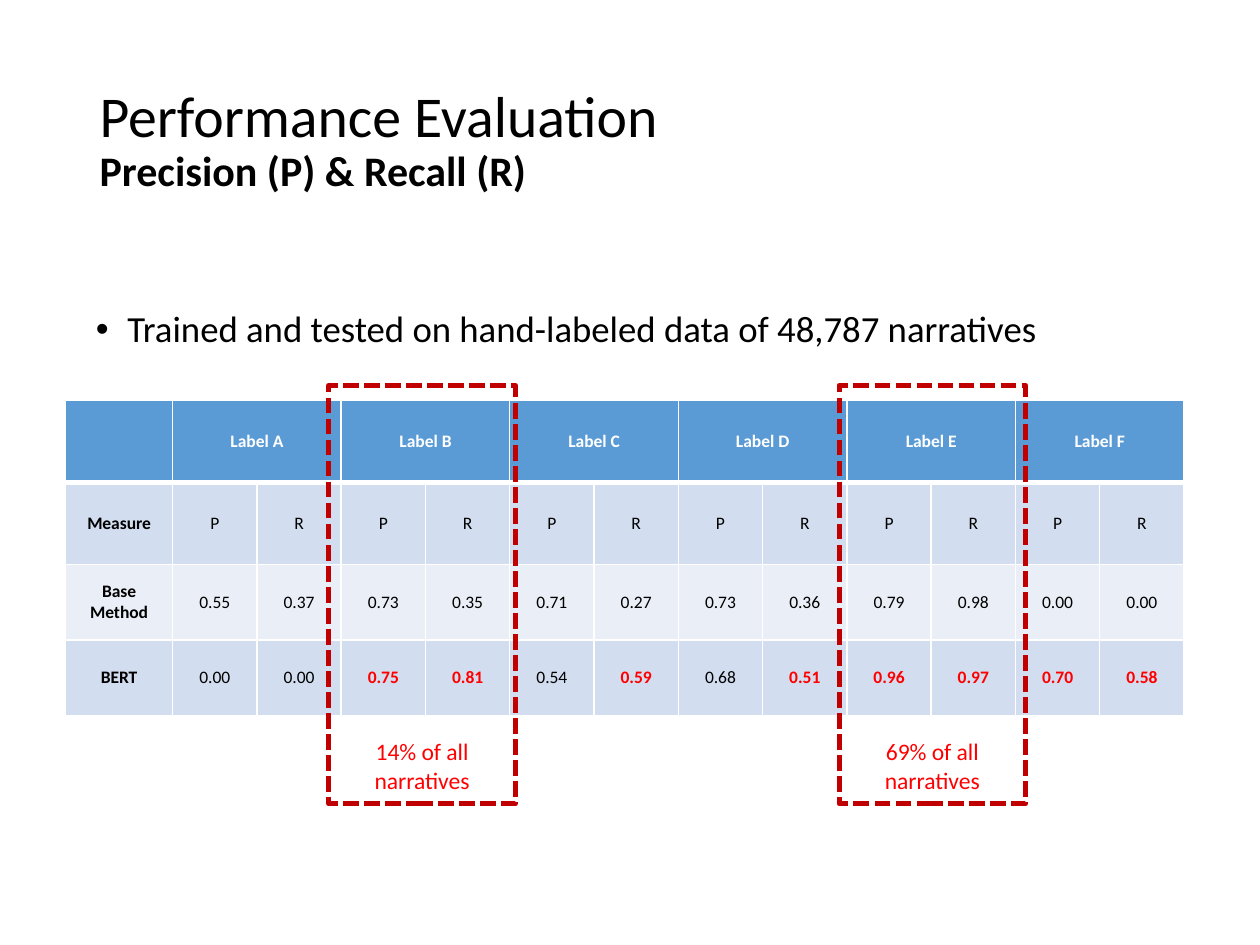
import copy
import pptx
import pptx.dml.color
import pptx.enum.dml
import pptx.enum.shapes
import pptx.enum.text
import pptx.oxml
import pptx.oxml.ns
import pptx.util
from lxml import etree

# Content
HEADING = "Performance Evaluation"
SUBHEADING = "Precision (P) & Recall (R)"
POINTS = ["Trained and tested on hand-labeled data of 48,787 narratives"]
LABELS = ["Label A", "Label B", "Label C", "Label D", "Label E", "Label F"]
MEASURES = ["P", "R"]
SCORES = [
    ("Measure", MEASURES * len(LABELS)),
    ("Base\nMethod", ["0.55", "0.37", "0.73", "0.35", "0.71", "0.27",
                      "0.73", "0.36", "0.79", "0.98", "0.00", "0.00"]),
    ("BERT", ["0.00", "0.00", "0.75", "0.81", "0.54", "0.59",
              "0.68", "0.51", "0.96", "0.97", "0.70", "0.58"]),
]
EMPHASIZED = {("BERT", column) for column in (2, 3, 5, 7, 8, 9, 10, 11)}
CALLOUTS = [(6.66, "69% of all narratives"), (2.61, "14% of all narratives")]

THEME = {
    "font": "Calibri", "text": "000000", "white": "FFFFFF", "red": "FF0000",
    "frame": "C00000", "header": "5B9BD5", "bands": ["D2DEEF", "EAEFF7"],
    "heading": 33, "subheading": 24, "body": 21, "callout": 13.5, "cell": 10,
}

# Grid, in inches
MARGIN, CONTENT_WIDTH = 0.69, 8.62
TABLE_LEFT, TABLE_TOP, TABLE_WIDTH, STUB = 0.52, 3.18, 8.88, 0.85
ROW_HEIGHTS = [0.65, 0.65, 0.6, 0.6]
FRAME_TOP, FRAME_WIDTH, FRAME_HEIGHT = 3.06, 1.48, 3.32
NOTE_TOP, NOTE_WIDTH, NOTE_HEIGHT = 5.85, 1.23, 0.45

CENTER = pptx.enum.text.PP_ALIGN.CENTER
MIDDLE = pptx.enum.text.MSO_ANCHOR.MIDDLE
inches = pptx.util.Inches


def rgb(value):
    return pptx.dml.color.RGBColor.from_string(value)


def write(paragraph, text, size, color=THEME["text"], bold=False, align=None):
    if align is not None:
        paragraph.alignment = align
    run = paragraph.add_run()
    run.text = text
    run.font.name = THEME["font"]
    run.font.size = pptx.util.Pt(size)
    run.font.bold = bold
    run.font.color.rgb = rgb(color)
    return run


def place(shape, left, top, width, height):
    shape.left, shape.top = inches(left), inches(top)
    shape.width, shape.height = inches(width), inches(height)


def style_cell(cell, fill, top=1, bottom=1):
    properties = cell._tc.get_or_add_tcPr()
    for side, points in (("L", 1), ("R", 1), ("T", top), ("B", bottom)):
        properties.append(pptx.oxml.parse_xml(
            f'<a:ln{side} {pptx.oxml.ns.nsdecls("a")} w="{pptx.util.Pt(points)}">'
            f'<a:solidFill><a:srgbClr val="{THEME["white"]}"/></a:solidFill></a:ln{side}>'))
    cell.fill.solid()
    cell.fill.fore_color.rgb = rgb(fill)
    cell.vertical_anchor = MIDDLE
    cell.margin_left = cell.margin_right = inches(0.07)
    cell.margin_top = cell.margin_bottom = inches(0.04)


def fill_cell(cell, text, **text_format):
    for index, line in enumerate(text.split("\n")):
        paragraph = cell.text_frame.add_paragraph() if index else cell.text_frame.paragraphs[0]
        write(paragraph, line, THEME["cell"], align=CENTER, **text_format)


def add_heading(slide):
    title = slide.shapes.title
    place(title, MARGIN, 0.4, CONTENT_WIDTH, 1.45)
    title.text_frame.auto_size = pptx.enum.text.MSO_AUTO_SIZE.NONE
    title.text_frame.vertical_anchor = MIDDLE
    paragraph = title.text_frame.paragraphs[0]
    paragraph.line_spacing = 0.9
    heading = write(paragraph, HEADING, THEME["heading"], align=pptx.enum.text.PP_ALIGN.LEFT)
    paragraph.add_line_break()
    # The break takes the heading's size
    line_break = paragraph._p.find(pptx.oxml.ns.qn("a:br"))
    line_break.append(copy.deepcopy(heading._r.rPr))
    write(paragraph, SUBHEADING, THEME["subheading"], bold=True)


def add_points(slide):
    body = slide.placeholders[1]
    place(body, MARGIN, 2.43, CONTENT_WIDTH, 3.57)
    frame = body.text_frame
    frame.auto_size = pptx.enum.text.MSO_AUTO_SIZE.NONE
    frame.margin_left = frame.margin_right = inches(0.07)
    frame.margin_top = frame.margin_bottom = inches(0.04)
    for index, point in enumerate(POINTS):
        paragraph = frame.add_paragraph() if index else frame.paragraphs[0]
        properties = paragraph._p.get_or_add_pPr()
        properties.set("marL", str(inches(0.25)))
        properties.set("indent", str(inches(-0.25)))
        etree.SubElement(properties, pptx.oxml.ns.qn("a:buChar"), char="•")
        paragraph.line_spacing = 0.9
        paragraph.space_before = pptx.util.Pt(10 if index else 0)
        write(paragraph, point, THEME["body"])


def add_scores(slide):
    columns = len(LABELS) * len(MEASURES)
    table = slide.shapes.add_table(
        len(SCORES) + 1, columns + 1, inches(TABLE_LEFT), inches(TABLE_TOP),
        inches(TABLE_WIDTH), inches(sum(ROW_HEIGHTS))).table
    for index, column in enumerate(table.columns):
        column.width = inches((TABLE_WIDTH - STUB) / columns if index else STUB)
    for row, height in zip(table.rows, ROW_HEIGHTS):
        row.height = inches(height)

    # Header row
    for column in range(columns + 1):
        style_cell(table.cell(0, column), THEME["header"], bottom=3)
    for index, label in enumerate(LABELS):
        first = 1 + index * len(MEASURES)
        cell = table.cell(0, first)
        cell.merge(table.cell(0, first + len(MEASURES) - 1))
        fill_cell(cell, label, color=THEME["white"], bold=True)

    # Banded score rows
    for row, (name, values) in enumerate(SCORES, start=1):
        band = THEME["bands"][(row - 1) % 2]
        for column, text in enumerate([name] + values):
            cell = table.cell(row, column)
            style_cell(cell, band, top=3 if row == 1 else 1)
            emphasized = (name, column - 1) in EMPHASIZED
            fill_cell(cell, text, bold=emphasized or column == 0,
                      color=THEME["red"] if emphasized else THEME["text"])


def add_callout(slide, left, text):
    group = slide.shapes.add_group_shape()
    rectangle = pptx.enum.shapes.MSO_SHAPE.RECTANGLE
    frame = group.shapes.add_shape(rectangle, inches(left), inches(FRAME_TOP),
                                   inches(FRAME_WIDTH), inches(FRAME_HEIGHT))
    frame.shadow.inherit = False
    frame.fill.background()
    frame.line.color.rgb = rgb(THEME["frame"])
    frame.line.width = pptx.util.Pt(3)
    frame.line.dash_style = pptx.enum.dml.MSO_LINE.SQUARE_DOT

    note = group.shapes.add_shape(
        rectangle, inches(left + (FRAME_WIDTH - NOTE_WIDTH) / 2), inches(NOTE_TOP),
        inches(NOTE_WIDTH), inches(NOTE_HEIGHT))
    note.shadow.inherit = False
    note.fill.solid()
    note.fill.fore_color.rgb = rgb(THEME["white"])
    note.line.fill.background()
    note.text_frame.word_wrap = True
    note.text_frame.vertical_anchor = MIDDLE
    write(note.text_frame.paragraphs[0], text, THEME["callout"],
          color=THEME["red"], align=CENTER)


def main():
    deck = pptx.Presentation()
    deck.slide_width, deck.slide_height = inches(10), inches(7.5)
    slide = deck.slides.add_slide(deck.slide_layouts[1])
    add_heading(slide)
    add_points(slide)
    add_scores(slide)
    for left, text in CALLOUTS:
        add_callout(slide, left, text)
    deck.save("out.pptx")


if __name__ == "__main__":
    main()
